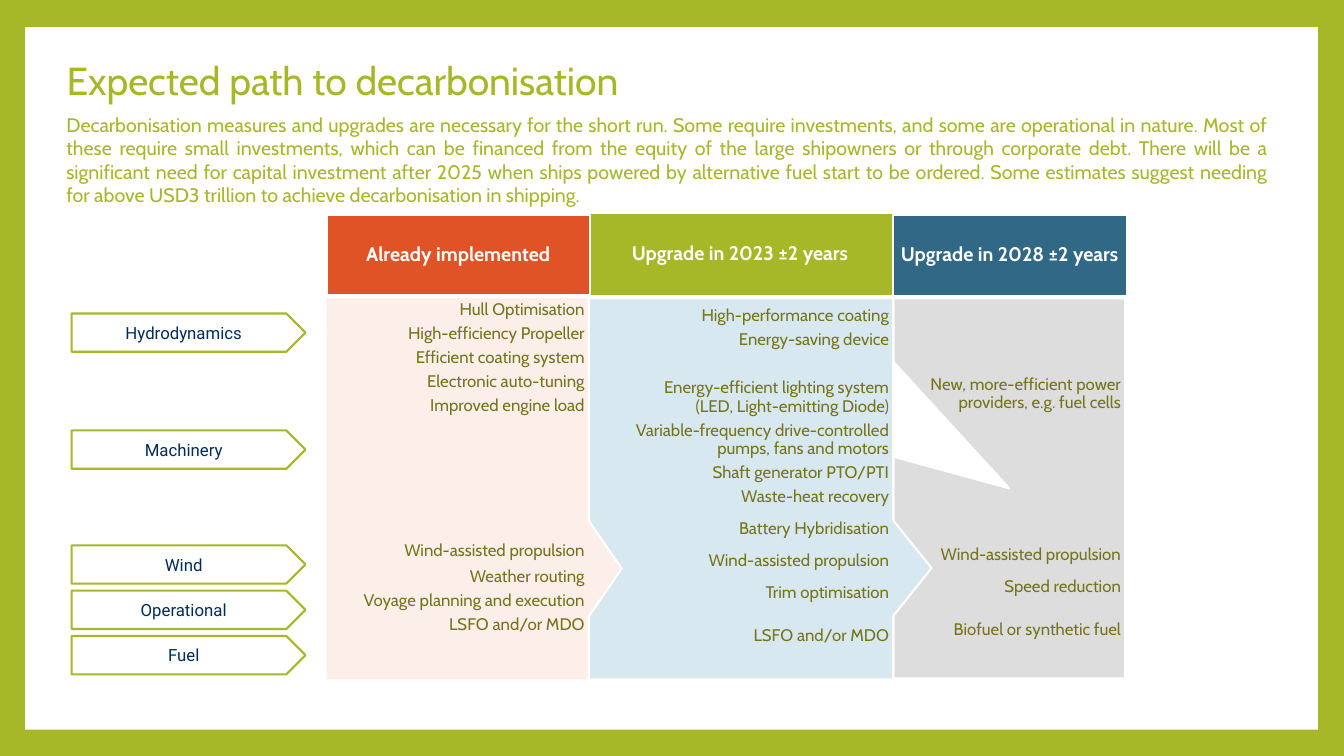
from pptx import Presentation
from pptx.dml.color import RGBColor
from pptx.enum.shapes import MSO_SHAPE
from pptx.enum.text import MSO_ANCHOR, MSO_AUTO_SIZE, PP_ALIGN
from pptx.util import Inches, Pt

LIME, WHITE, OLIVE, NAVY = "A6B727", "FFFFFF", "75741A", "002B5C"
GAP = 4.2


def color(code):
    return RGBColor.from_string(code)


def write(frame, lines, size=12, font="Cabin", ink=OLIVE, bold=False,
          align=PP_ALIGN.LEFT, anchor=MSO_ANCHOR.MIDDLE, space=None,
          side=0.1, top=0.05, base=0.05):
    frame.word_wrap = True
    frame.auto_size = MSO_AUTO_SIZE.NONE
    frame.vertical_anchor = anchor
    frame.margin_left = frame.margin_right = Inches(side)
    frame.margin_top, frame.margin_bottom = Inches(top), Inches(base)
    for i, (text, after) in enumerate(lines):
        para = frame.paragraphs[0] if i == 0 else frame.add_paragraph()
        para.alignment = align
        para.space_before, para.space_after = Pt(0), Pt(after)
        if space:
            para.line_spacing = space
        run = para.add_run()
        run.text = text
        run.font.size, run.font.name, run.font.bold = Pt(size), font, bold
        run.font.color.rgb = color(ink)


class Page:
    def __init__(self, deck):
        self.slide = deck.slides.add_slide(deck.slide_layouts[5])
        self.slide.background.fill.solid()
        self.slide.background.fill.fore_color.rgb = color(LIME)

    def shape(self, kind, box, fill, line=None, tip=()):
        item = self.slide.shapes.add_shape(kind, *map(Inches, box))
        item.shadow.inherit = False
        item.fill.solid()
        item.fill.fore_color.rgb = color(fill)
        if line:
            item.line.color.rgb = color(line)
            item.line.width = Pt(1.5)
        else:
            item.line.fill.background()
        for i, part in enumerate(tip):
            item.adjustments[i] = part
        return item

    def title(self, text, box):
        item = self.slide.shapes.title
        item.left, item.top, item.width, item.height = map(Inches, box)
        write(item.text_frame, [(text, 0)], size=27.9, ink=LIME,
              anchor=MSO_ANCHOR.TOP)

    def text(self, lines, box, **style):
        item = self.slide.shapes.add_textbox(*map(Inches, box))
        write(item.text_frame, lines, **style)

    def panel(self, box, fill, tip, inset, top, lines):
        left, y, width, height = box
        self.shape(MSO_SHAPE.RECTANGULAR_CALLOUT, box, fill, WHITE, tip)
        self.text(lines, (left + inset, y, width - inset, height),
                  align=PP_ALIGN.RIGHT, anchor=MSO_ANCHOR.TOP, space=0.9,
                  side=0.04, top=top, base=0.04)

    def head(self, text, box, fill):
        item = self.shape(MSO_SHAPE.RECTANGLE, box, fill, WHITE)
        write(item.text_frame, [(text, 0)], size=14, ink=WHITE, bold=True,
              align=PP_ALIGN.CENTER, space=0.9, side=0.05)

    def label(self, text, top):
        item = self.shape(MSO_SHAPE.PENTAGON, (0.71, top, 2.32, 0.38),
                          WHITE, LIME)
        write(item.text_frame, [(text, 0)], font="Roboto", ink=NAVY,
              align=PP_ALIGN.CENTER)


INTRO = (
    "Decarbonisation measures and upgrades are necessary for the short run. "
    "Some require investments, and some are operational in nature. Most of "
    "these require small investments, which can be financed from the equity "
    "of the large shipowners or through corporate debt. There will be a "
    "significant need for capital investment after 2025 when ships powered "
    "by alternative fuel start to be ordered. Some estimates suggest needing "
    "for above USD3 trillion to achieve decarbonisation in shipping."
)

LATER = [
    ("New, more-efficient power providers, e.g. fuel cells", 95.5),
    ("Wind-assisted propulsion", 10),
    ("Speed reduction", 18),
    ("Biofuel or synthetic fuel", GAP),
]
SOON = [
    ("High-performance coating", GAP),
    ("Energy-saving device", 21.3),
    ("Energy-efficient lighting system (LED, Light-emitting Diode)", GAP),
    ("Variable-frequency drive-controlled pumps, fans and motors", GAP),
    ("Shaft generator PTO/PTI", GAP),
    ("Waste-heat recovery", 10),
    ("Battery Hybridisation", 10),
    ("Wind-assisted propulsion", 10),
    ("Trim optimisation", 18),
    ("LSFO and/or MDO", GAP),
]
DONE = [
    ("Hull Optimisation", GAP),
    ("High-efficiency Propeller", GAP),
    ("Efficient coating system", GAP),
    ("Electronic auto-tuning", GAP),
    ("Improved engine load", 90),
    ("Wind-assisted propulsion", 6),
    ("Weather routing", GAP),
    ("Voyage planning and execution", GAP),
    ("LSFO and/or MDO", GAP),
]
SIDE = (0.625, 0.208)
STAGES = [
    ("Upgrade in 2028 ±2 years", (8.85, 2.13, 2.33, 0.81), "316886",
     (8.86, 2.96, 2.3, 3.77), "DDDDDD", (0, 0), 0.3, 0.77, LATER),
    ("Upgrade in 2023 ±2 years", (5.82, 2.11, 3.04, 0.83), LIME,
     (5.82, 2.96, 3.04, 3.78), "D8E8F1", SIDE, 0.38, 0.09, SOON),
    ("Already implemented", (3.24, 2.13, 2.61, 0.8), "DF5327",
     (3.23, 2.95, 2.61, 3.8), "FCEEE9", SIDE, 0.33, 0.04, DONE),
]
LABELS = {"Hydrodynamics": 3.11, "Machinery": 4.27, "Wind": 5.41,
          "Operational": 5.86, "Fuel": 6.31}


def main():
    deck = Presentation()
    deck.slide_width, deck.slide_height = Inches(13.33), Inches(7.5)
    page = Page(deck)
    sheet = page.shape(MSO_SHAPE.RECTANGLE, (0.25, 0.27, 12.82, 6.97), WHITE)
    tree = page.slide.shapes.title.element.getparent()
    tree.remove(sheet.element)
    page.slide.shapes.title.element.addprevious(sheet.element)
    page.title("Expected path to decarbonisation", (0.56, 0.51, 9.06, 0.49))
    for name, bar, tint, box, fill, tip, inset, top, lines in STAGES:
        page.panel(box, fill, tip, inset, top, lines)
        page.head(name, bar, tint)
    page.text([(INTRO, 0)], (0.56, 1.16, 12.12, 0.85), size=14, ink=LIME,
              align=PP_ALIGN.JUSTIFY)
    for name, top in LABELS.items():
        page.label(name, top)
    deck.save("out.pptx")


if __name__ == "__main__":
    main()
